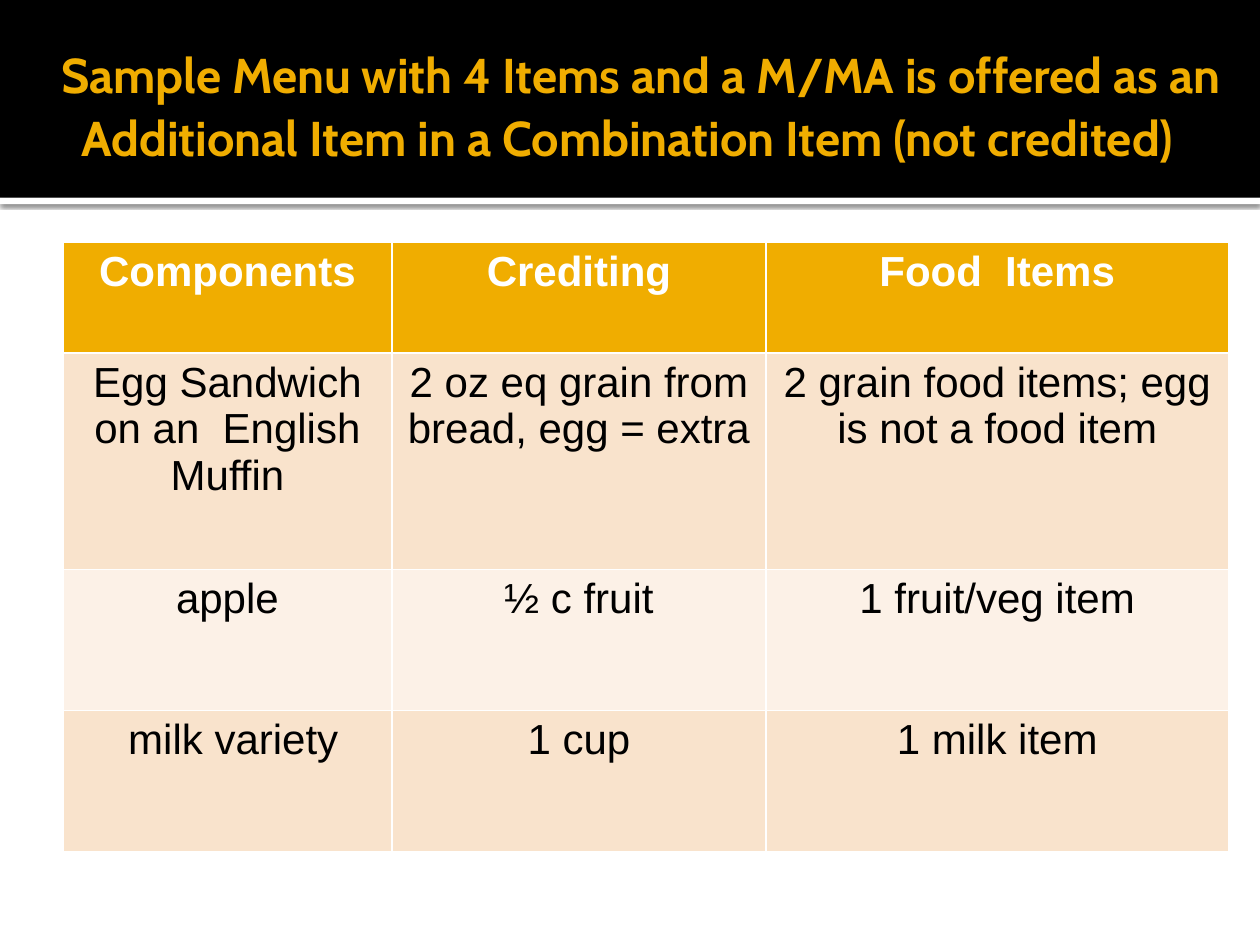
import lxml.etree
import pptx
import pptx.dml.color
import pptx.enum.shapes
import pptx.enum.text
import pptx.oxml
import pptx.oxml.ns
import pptx.util

Inches, Pt = pptx.util.Inches, pptx.util.Pt
CENTER = pptx.enum.text.PP_ALIGN.CENTER
COLORS = {"black": "000000", "white": "FFFFFF", "gold": "F0AD00",
          "band_dark": "F9E3CC", "band_light": "FCF1E7"}
TITLE = ("Sample Menu with 4 Items and a M/MA is offered as an "
         "Additional Item in a Combination Item (not credited) ")
MENU = [
    ["Components", "Crediting", "Food  Items"],
    ["Egg Sandwich on an  English Muffin", "2 oz eq grain from bread, egg = extra",
     "2 grain food items; egg is not a food item"],
    ["apple", "½ c fruit", "1 fruit/veg item"],
    [" milk variety", "1 cup", "1 milk item"],
]
COL_WIDTHS = [2.61, 2.97, 3.67]
ROW_HEIGHTS = [0.88, 1.72, 1.12, 1.12]


def rgb(name):
    """Return the named colour."""
    return pptx.dml.color.RGBColor.from_string(COLORS[name])


def style_font(font, name, size, color, bold):
    """Set the look of a font."""
    font.name, font.size, font.bold = name, Pt(size), bold
    font.color.rgb = rgb(color)


def add_bar(s, x, y, w, h, color):
    """Add a plain filled rectangle."""
    sp = s.shapes.add_shape(pptx.enum.shapes.MSO_SHAPE.RECTANGLE,
                            Inches(x), Inches(y), Inches(w), Inches(h))
    sp.shadow.inherit = False
    sp.fill.solid()
    sp.fill.fore_color.rgb = rgb(color)
    sp.line.fill.background()
    return sp


def add_shadow(sp):
    """Give a shape a soft shadow below it."""
    effects = sp.element.spPr.find(pptx.oxml.ns.qn("a:effectLst"))
    effects.append(pptx.oxml.parse_xml(
        f'<a:outerShdw {pptx.oxml.ns.nsdecls("a")} blurRad="{Pt(2.5)}" dist="{Pt(0.8)}" '
        f'dir="5400000" rotWithShape="0"><a:srgbClr val="{COLORS["black"]}">'
        '<a:alpha val="60000"/></a:srgbClr></a:outerShdw>'))


def add_header(s, x, y, w, h):
    """Add the black title band with its white shadowed edge."""
    add_shadow(add_bar(s, x, y + h, w, 0.05, "white"))
    add_bar(s, x, y, w, h, "black")
    tb = s.shapes.add_textbox(Inches(x), Inches(y + 0.17), Inches(w), Inches(h - 0.4))
    tf = tb.text_frame
    tf.word_wrap = True
    tf.vertical_anchor = pptx.enum.text.MSO_ANCHOR.MIDDLE
    tf.margin_left = Inches(0.1)
    tf.margin_top = tf.margin_right = tf.margin_bottom = Inches(0.05)
    p = tf.paragraphs[0]
    p.alignment = CENTER
    for text, size in ((" ", 39.6), (TITLE, 27.9)):
        r = p.add_run()
        r.text = text
        style_font(r.font, "Cabin", size, "gold", True)


def add_menu(s, x, y, w, h):
    """Add the menu table with a gold heading row and banded rows."""
    table = s.shapes.add_table(len(MENU), len(COL_WIDTHS), Inches(x), Inches(y),
                               Inches(w), Inches(h)).table
    for col, width in zip(table.columns, COL_WIDTHS):
        col.width = Inches(width)
    for i, (row, height) in enumerate(zip(table.rows, ROW_HEIGHTS)):
        row.height = Inches(height)
        fill = "gold" if i == 0 else "band_dark" if i % 2 else "band_light"
        for cell, text in zip(row.cells, MENU[i]):
            cell.text = text
            cell.fill.solid()
            cell.fill.fore_color.rgb = rgb(fill)
            p = cell.text_frame.paragraphs[0]
            p.alignment = CENTER
            style_font(p.font, "Arial", 24, "black" if i else "white", i == 0)


def main():
    """Build and save the slide."""
    prs = pptx.Presentation()
    prs.slide_width, prs.slide_height = Inches(10), Inches(7.5)
    s = prs.slides.add_slide(prs.slide_layouts[6])
    add_header(s, 0, 0, 10, 1.57)
    add_menu(s, 0.5, 1.92, sum(COL_WIDTHS), sum(ROW_HEIGHTS))
    prs.save("out.pptx")


if __name__ == "__main__":
    main()
